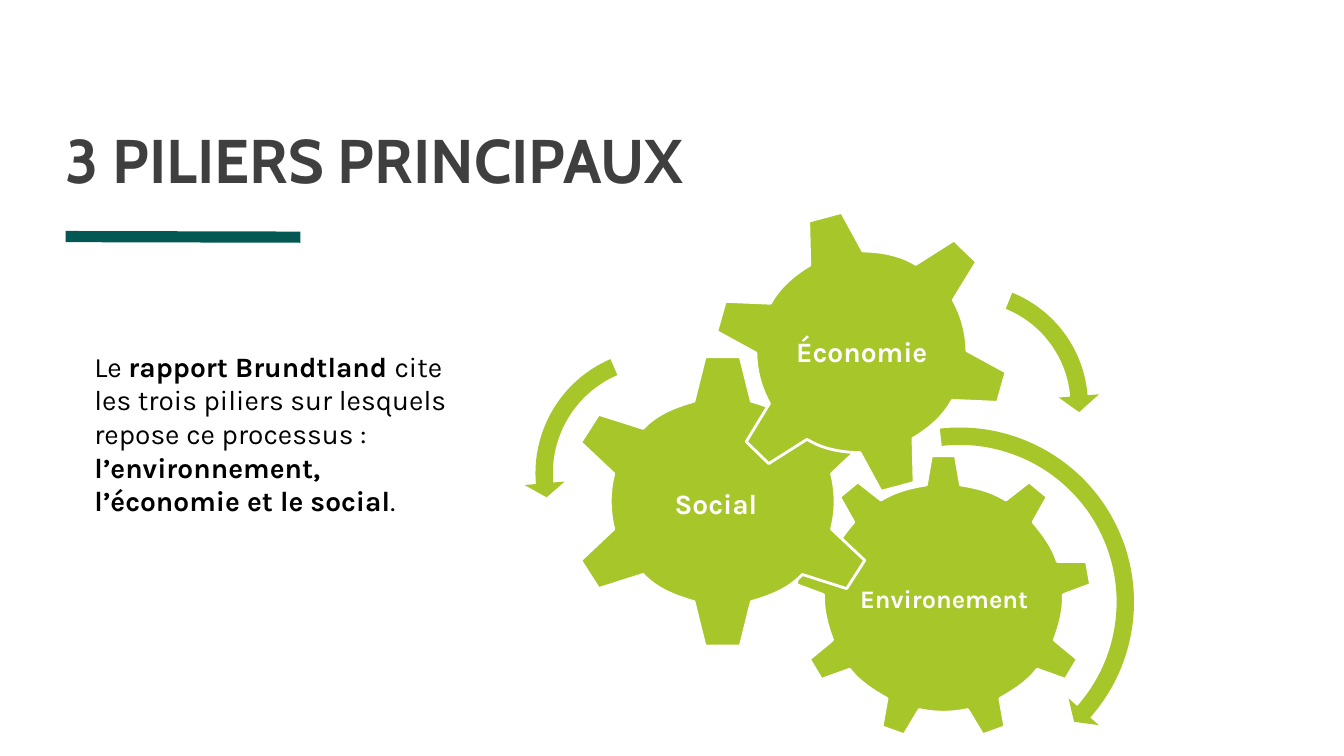
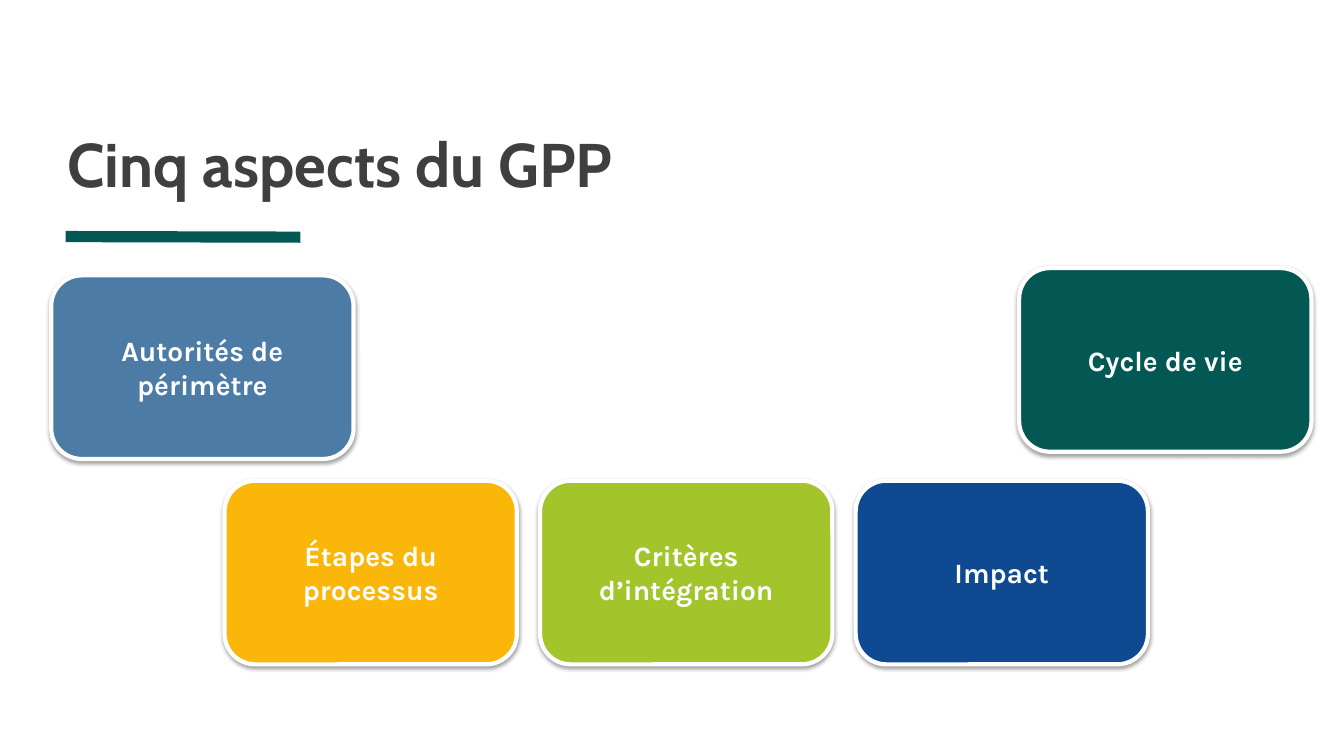
from math import atan2, ceil, cos, hypot, pi, radians, sin, tan

from lxml import etree
from pptx import Presentation
from pptx.dml.color import RGBColor
from pptx.enum.shapes import MSO_CONNECTOR, MSO_SHAPE
from pptx.enum.text import MSO_ANCHOR, PP_ALIGN
from pptx.oxml.ns import qn
from pptx.util import Pt

STRAIGHT = MSO_CONNECTOR.STRAIGHT
CARD = MSO_SHAPE.FLOWCHART_ALTERNATE_PROCESS
TOP, MIDDLE, BOTTOM = MSO_ANCHOR.TOP, MSO_ANCHOR.MIDDLE, MSO_ANCHOR.BOTTOM
LEFT, CENTER = PP_ALIGN.LEFT, PP_ALIGN.CENTER

COLORS = {
    "title": "3F3F3F", "body": "000000", "white": "FFFFFF", "accent": "035854",
    "gear": "A6C62A", "steel": "4C7BA5", "amber": "FAB609", "lime": "A3C42A",
    "blue": "0F4991", "shadow": "000000",
}
TITLE_FONT, BODY_FONT = "Cabin", "Karla"
HEAD_HALF = 14.4


def rgb(name):
    """Return the palette colour with this name."""
    return RGBColor.from_string(COLORS[name])


def fill_shape(shape, color, line_width=0):
    """Fill a shape and give it a white outline or none."""
    shape.shadow.inherit = False
    shape.fill.solid()
    shape.fill.fore_color.rgb = rgb(color)
    if line_width:
        shape.line.color.rgb = rgb("white")
        shape.line.width = Pt(line_width)
    else:
        shape.line.fill.background()


def write_text(frame, runs, size, color, font=BODY_FONT, align=LEFT,
               anchor=TOP, margins=(7.2, 3.6), spacing=None):
    """Write one paragraph of (text, bold) runs into a text frame."""
    frame.word_wrap = True
    frame.vertical_anchor = anchor
    frame.margin_left = frame.margin_right = Pt(margins[0])
    frame.margin_top = frame.margin_bottom = Pt(margins[1])
    paragraph = frame.paragraphs[0]
    paragraph.alignment = align
    if spacing:
        paragraph.line_spacing = spacing
    paragraph.font.name = font
    paragraph.font.size = Pt(size)
    paragraph.font.color.rgb = rgb(color)
    if len(runs) == 1:
        paragraph.font.bold = runs[0][1]
    for text, bold in runs:
        run = paragraph.add_run()
        run.text = text
        if len(runs) > 1:
            run.font.bold = bold


def add_text(slide, box, runs, size, color, **style):
    """Add a text box at (left, top, width, height)."""
    frame = slide.shapes.add_textbox(*map(Pt, box)).text_frame
    write_text(frame, runs, size, color, **style)


def add_title(slide, left, top, title):
    """Place the title and the accent rule shared by all slides."""
    rule = slide.shapes.add_connector(STRAIGHT, Pt(46.8), Pt(169), Pt(214.6), Pt(169.4))
    rule.line.color.rgb = rgb("accent")
    rule.line.width = Pt(8)
    etree.SubElement(rule._element.spPr, qn("a:effectLst"))
    add_text(slide, (left, top, 864, 123.8), [(title, True)], 44, "title",
             font=TITLE_FONT, anchor=BOTTOM, margins=(0, 0), spacing=0.8)


def polar(radius, angle):
    """Return the point at this radius and angle in radians."""
    return radius * cos(angle), radius * sin(angle)


def lines(points):
    """Return one straight step per point."""
    return [[point] for point in points]


def arc(radius, start, end_radius, end):
    """Return Bézier steps of at most a quarter turn between polar positions."""
    count = ceil(abs(end - start) / (pi / 2))
    turn, growth = (end - start) / count, (end_radius - radius) / count
    pull = 4 / 3 * tan(turn / 4)
    steps = []
    for index in range(count):
        a, r = start + turn * index, radius + growth * index
        (x1, y1), (x2, y2) = polar(r, a), polar(r + growth, a + turn)
        steps.append([(x1 - pull * y1, y1 + pull * x1),
                      (x2 + pull * y2, y2 - pull * x2), (x2, y2)])
    return steps


def add_outline(slide, center, start, steps, line_width=0):
    """Draw a closed outline of straight and Bézier steps around a centre."""
    def place(point):
        return Pt(center[0] + point[0]), Pt(center[1] + point[1])

    builder = slide.shapes.build_freeform(*place(start))
    builder.add_line_segments([place(point) for step in steps for point in step], close=True)
    outline = builder.convert_to_shape()
    vertices = iter(list(outline._element.iter(qn("a:lnTo"))))
    for step in steps:
        vertex, *others = [next(vertices) for _ in step]
        if others:
            vertex.tag = qn("a:cubicBezTo")
        for other in others:
            vertex.append(other[0])
            other.getparent().remove(other)
    fill_shape(outline, "gear", line_width)
    return outline


def mirror(teeth):
    """Reflect teeth left to right, keeping clockwise order."""
    return [[(-x, y) for x, y in reversed(tooth)] for tooth in reversed(teeth)]


def six_teeth(top, side):
    """Return a six-toothed gear from its top and upper right teeth."""
    half = [top, side, [(x, -y) for x, y in reversed(side)]]
    return half + [[(-x, -y) for x, y in tooth] for tooth in half]


def add_gear(slide, center, teeth, rotation, label, size, label_shift):
    """Draw a gear whose teeth are joined by arcs, with its label."""
    steps = []
    for tooth, following in zip(teeth, teeth[1:] + teeth[:1]):
        start, end = tooth[-1], following[0]
        angle = atan2(start[1], start[0])
        sweep = (atan2(end[1], end[0]) - angle) % (2 * pi)
        steps += lines(tooth[1:]) + arc(hypot(*start), angle, hypot(*end), angle + sweep)
    add_outline(slide, center, teeth[0][0], steps, 2).rotation = rotation
    width, height = 140, 104
    box = (center[0] + label_shift[0] - width / 2,
           center[1] + label_shift[1] - height / 2, width, height)
    add_text(slide, box, [(label, True)], size, "white", align=CENTER,
             anchor=MIDDLE, margins=(2.2, 2.2), spacing=0.9)


def add_turn_arrow(slide, center, radius, start, end, tip):
    """Draw a curved band from start to end with a head reaching tip, in degrees."""
    half_width = 6.2
    start, end, tip = map(radians, (start, end, tip))
    outer, inner = radius + half_width, radius - half_width
    head = [polar(radius + HEAD_HALF, end), polar(radius, tip),
            polar(radius - HEAD_HALF, end), polar(inner, end)]
    add_outline(slide, center, polar(outer, start),
                arc(outer, start, outer, end) + lines(head) + arc(inner, end, inner, start))


SOCIAL_TOP = [(-20.5, -71.6), (-12.6, -103.3), (12.6, -103.3), (20.5, -71.6)]
SOCIAL_SIDE = [(56.9, -52.2), (88.6, -62.3), (101.5, -42.1), (77.8, -19.8)]
ECONOMY_TOP = [(-19.6, -69.3), (-12.2, -99.9), (12.2, -99.9), (19.6, -69.3)]
ECONOMY_SIDE = [(53.7, -50.3), (84.6, -60), (96.1, -40.7), (73, -18.7)]
ENVIRONMENT_TOP = [(-12.2, -80.6), (-8.6, -101.5), (8.6, -101.5), (12.2, -80.6)]
ENVIRONMENT_RIGHT = [
    [(44.6, -69.8), (61.2, -82.8), (74.2, -72), (64.1, -54)],
    [(81.4, -25.9), (102.2, -25.9), (105.1, -9.4), (85.7, -2.2)],
    [(79.2, 30.2), (95.8, 43.9), (87.1, 58.3), (67, 51.1)],
    [(40.3, 72), (43.9, 92.2), (28.1, 97.9), (17.3, 79.9)],
]
GEARS = [
    ((299.9, 278), [ENVIRONMENT_TOP] + ENVIRONMENT_RIGHT + mirror(ENVIRONMENT_RIGHT),
     0, "Environement", 18, (0.5, 2)),
    ((142.2, 209.2), six_teeth(SOCIAL_TOP, SOCIAL_SIDE), 0, "Social", 20, (-4.8, 3)),
    ((241.3, 102.3), six_teeth(ECONOMY_TOP, ECONOMY_SIDE), 345, "Économie", 20, (0.3, 1)),
]
TURN_ARROWS = [
    ((311.4, 281), 118.4, -96.5, 41.5, 46.3),
    ((97.3, 189), 82.6, 246.6, 175, 168),
    ((316.5, 140.4), 80.5, -67.9, -4.7, 3.5),
]


def add_gear_train(slide, left, top):
    """Place the three interlocking gears and their turning arrows."""
    for (x, y), *gear in GEARS:
        add_gear(slide, (left + x, top + y), *gear)
    for (x, y), *turn in TURN_ARROWS:
        add_turn_arrow(slide, (left + x, top + y), *turn)


def add_card(slide, left, top, label, color, width=208.8):
    """Place a rounded aspect card with a soft shadow below it."""
    card = slide.shapes.add_shape(CARD, Pt(left), Pt(top), Pt(width), Pt(131.2))
    fill_shape(card, color, 3)
    effects = card._element.spPr.find(qn("a:effectLst"))
    shadow = etree.SubElement(effects, qn("a:outerShdw"), blurRad=str(Pt(3.1)),
                              dist=str(Pt(1.6)), dir="5400000", rotWithShape="0")
    tint = etree.SubElement(shadow, qn("a:srgbClr"), val=COLORS["shadow"])
    etree.SubElement(tint, qn("a:alpha"), val="37000")
    write_text(card.text_frame, [(label, True)], 20, "white", align=CENTER, anchor=MIDDLE)


def build_pillars(slide):
    """Build the slide on the three pillars."""
    add_title(slide, 46.8, 15.8, "3 PILIERS PRINCIPAUX")
    add_gear_train(slide, 374, 149)
    add_text(slide, (60.3, 246, 267, 128), [
        ("Le ", False),
        ("rapport Brundtland ", True),
        ("cite les trois piliers sur lesquels repose ce processus : ", False),
        ("l’environnement, l’économie et le social", True),
        (".", False),
    ], 20, "body")


def build_aspects(slide):
    """Build the slide on the five aspects."""
    add_title(slide, 48.2, 18.7, "Cinq aspects du GPP")
    lower_cards = [("Étapes du processus", "amber"),
                   ("Critères d’intégration", "lime"), ("Impact", "blue")]
    for column, (label, color) in enumerate(lower_cards):
        add_card(slide, 160.4 + 225.4 * column, 343.4, label, color)
    add_card(slide, 728, 191.5, "Cycle de vie", "accent")
    add_card(slide, 36.6, 196.7, "Autorités de périmètre", "steel", 216)


def main():
    """Build and save the presentation."""
    deck = Presentation()
    deck.slide_width, deck.slide_height = Pt(960), Pt(540)
    for build in (build_pillars, build_aspects):
        build(deck.slides.add_slide(deck.slide_layouts[6]))
    deck.save("out.pptx")


if __name__ == "__main__":
    main()
